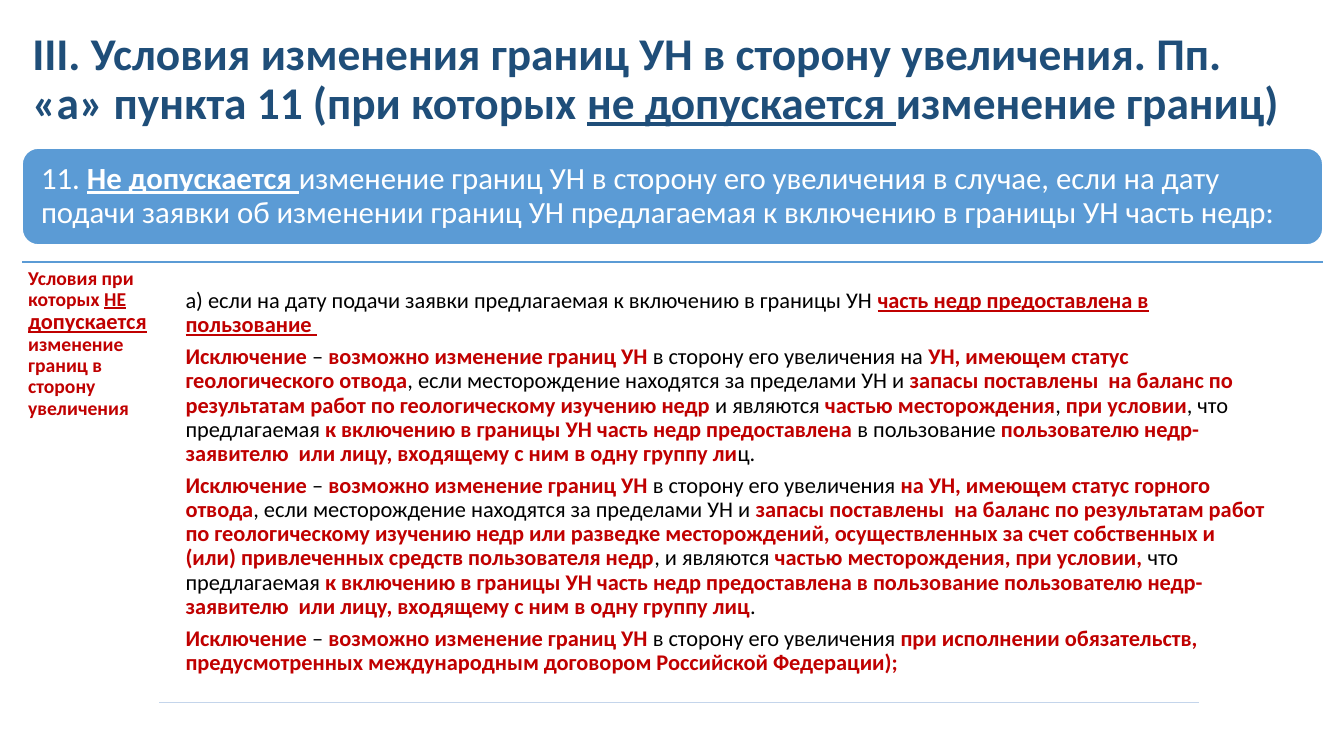
from dataclasses import dataclass

from lxml import etree
from pptx import Presentation
from pptx.dml.color import RGBColor
from pptx.enum.shapes import MSO_CONNECTOR, MSO_SHAPE
from pptx.enum.text import MSO_ANCHOR, MSO_AUTO_SIZE, PP_ALIGN
from pptx.oxml.ns import qn
from pptx.util import Inches, Pt

ROUNDED = MSO_SHAPE.ROUNDED_RECTANGLE
STRAIGHT = MSO_CONNECTOR.STRAIGHT
TOP, MIDDLE = MSO_ANCHOR.TOP, MSO_ANCHOR.MIDDLE
LEFT = PP_ALIGN.LEFT
NO_AUTOFIT = MSO_AUTO_SIZE.NONE


@dataclass(frozen=True)
class Theme:
    font: str = "Calibri"
    title: RGBColor = RGBColor(0x1F, 0x4E, 0x79)
    blue: RGBColor = RGBColor(0x5B, 0x9B, 0xD5)
    pale: RGBColor = RGBColor(0xC4, 0xD5, 0xEB)
    red: RGBColor = RGBColor(0xC0, 0x00, 0x00)
    black: RGBColor = RGBColor(0, 0, 0)
    white: RGBColor = RGBColor(0xFF, 0xFF, 0xFF)
    title_size: float = 32.4
    banner_size: int = 22
    body_size: int = 16
    label_size: int = 14


THEME = Theme()


def add_run(paragraph, text, size, color, bold=False, underline=False):
    run = paragraph.add_run()
    run.text = text
    font = run.font
    font.name, font.size, font.color.rgb = THEME.font, Pt(size), color
    font.bold, font.underline = bold, underline


def prepare_frame(shape, margin, anchor):
    frame = shape.text_frame
    frame.word_wrap = True
    frame.auto_size = NO_AUTOFIT
    frame.vertical_anchor = anchor
    frame.margin_left = frame.margin_right = Inches(margin)
    frame.margin_top = frame.margin_bottom = Inches(margin)
    paragraph = frame.paragraphs[0]
    paragraph.alignment = LEFT
    paragraph.line_spacing = 0.9
    return frame


presentation = Presentation()
presentation.slide_width = Inches(13.33)
presentation.slide_height = Inches(7.5)
slide = presentation.slides.add_slide(presentation.slide_layouts[5])
shapes = slide.shapes

# Title
title = shapes.title
title.left, title.top = Inches(0.22), Inches(0.07)
title.width, title.height = Inches(12.63), Inches(1.45)
paragraph = prepare_frame(title, 0.1, MIDDLE).paragraphs[0]
for text, underline in (
    ("III. Условия изменения границ УН в сторону увеличения. Пп. «а» пункта 11 (при которых ", False),
    ("не допускается ", True),
    ("изменение границ)", False),
):
    add_run(paragraph, text, THEME.title_size, THEME.title, bold=True, underline=underline)

# Banner
banner = shapes.add_shape(ROUNDED, Inches(0.22), Inches(1.47), Inches(12.9), Inches(0.96))
banner.shadow.inherit = False
banner.fill.solid()
banner.fill.fore_color.rgb = THEME.blue
banner.line.color.rgb = THEME.white
banner.line.width = Pt(1)
paragraph = prepare_frame(banner, 0.09, MIDDLE).paragraphs[0]
banner.text_frame.margin_left = banner.text_frame.margin_right = Inches(0.14)
for text, strong in (
    ("11. ", False),
    ("Не допускается ", True),
    ("изменение границ УН в сторону его увеличения в случае, если на дату подачи заявки "
     "об изменении границ УН предлагаемая к включению в границы УН часть недр:", False),
):
    add_run(paragraph, text, THEME.banner_size, THEME.white, bold=strong, underline=strong)

# Rules above and below the conditions
for start, end, y, color in ((0.22, 13.12, 2.6, THEME.blue), (1.58, 11.89, 6.97, THEME.pale)):
    rule = shapes.add_connector(STRAIGHT, Inches(start), Inches(y), Inches(end), Inches(y))
    rule.line.color.rgb = color
    rule.line.width = Pt(1)
    etree.SubElement(rule._element.spPr, qn("a:effectLst"))

# Side label
label = shapes.add_textbox(Inches(0.22), Inches(2.6), Inches(1.36), Inches(4.58))
paragraph = prepare_frame(label, 0.06, TOP).paragraphs[0]
for text, size, underline in (
    ("Условия при которых ", THEME.label_size, False),
    ("НЕ ", THEME.label_size, True),
    ("допускается ", THEME.body_size, True),
    ("изменение границ в сторону увеличения", THEME.label_size, False),
):
    add_run(paragraph, text, size, THEME.red, bold=True, underline=underline)

# Conditions: text between asterisks is bold red
exception = "*Исключение* – *возможно изменение границ УН *в сторону его увеличения "
conditions = (
    "а) если на дату подачи заявки предлагаемая к включению в границы УН "
    "*часть недр предоставлена в пользование *",
    exception + "на *УН, имеющем статус геологического отвода*, если месторождение находятся "
    "за пределами УН и *запасы поставлены  на баланс по результатам работ по геологическому "
    "изучению недр* и являются *частью месторождения*, *при условии*, что предлагаемая "
    "*к включению в границы УН часть недр предоставлена *в пользование *пользователю "
    "недр-заявителю  или лицу, входящему с ним в одну группу ли*ц.",
    exception + "*на УН, имеющем статус горного отвода*, если месторождение находятся "
    "за пределами УН и *запасы поставлены  на баланс по результатам работ по геологическому "
    "изучению недр или разведке месторождений, осуществленных за счет собственных и (или) "
    "привлеченных средств пользователя недр*, и являются *частью месторождения, при условии,* "
    "что предлагаемая *к включению в границы УН часть недр предоставлена в пользование "
    "пользователю недр-заявителю  или лицу, входящему с ним в одну группу лиц*.",
    exception + "*при исполнении обязательств, предусмотренных международным договором "
    "Российской Федерации);*",
)
body = shapes.add_textbox(Inches(1.77), Inches(2.8), Inches(10.85), Inches(4.17))
frame = prepare_frame(body, 0.07, TOP)
for number, condition in enumerate(conditions):
    paragraph = frame.add_paragraph() if number else frame.paragraphs[0]
    paragraph.line_spacing = 0.9
    paragraph.space_after = Pt(0.35 * THEME.body_size)
    for position, text in enumerate(condition.split("*")):
        strong = position % 2 == 1
        if text:
            add_run(paragraph, text, THEME.body_size, THEME.red if strong else THEME.black,
                    bold=strong, underline=strong and number == 0)

presentation.save("out.pptx")
